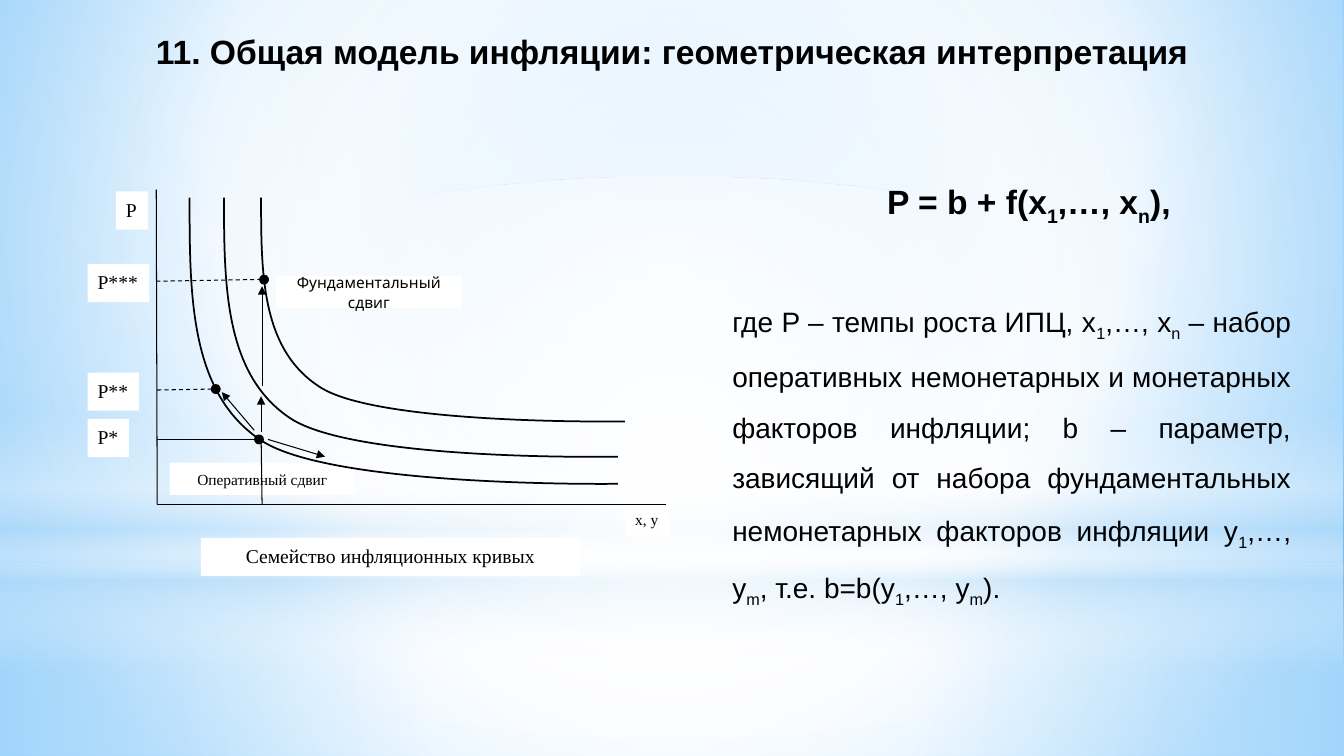
"""Build the slide on the general model of inflation and its family of curves."""
from pptx import Presentation
from pptx.dml.color import RGBColor
from pptx.enum.dml import MSO_LINE
from pptx.enum.shapes import MSO_CONNECTOR, MSO_SHAPE
from pptx.enum.text import MSO_ANCHOR, MSO_AUTO_SIZE, PP_ALIGN
from pptx.oxml import parse_xml
from pptx.oxml.ns import nsdecls, qn
from pptx.util import Pt

RECT, OVAL = MSO_SHAPE.RECTANGLE, MSO_SHAPE.OVAL
LEFT, CENTER, FULL = PP_ALIGN.LEFT, PP_ALIGN.CENTER, PP_ALIGN.JUSTIFY
TOP, MIDDLE = MSO_ANCHOR.TOP, MSO_ANCHOR.MIDDLE
GROW, FIXED = MSO_AUTO_SIZE.SHAPE_TO_FIT_TEXT, MSO_AUTO_SIZE.NONE
DASH, STRAIGHT = MSO_LINE.DASH, MSO_CONNECTOR.STRAIGHT
COLORS = {"ink": "000000", "white": "FFFFFF", "mist": "B4DCFA",
          "sky": "9ED5FF", "deep": "5BB9FF"}
INK = RGBColor.from_string(COLORS["ink"])
WHITE = RGBColor.from_string(COLORS["white"])
SERIF, SANS = "Times New Roman", "Arial"


def blend(stops, rim):
    """Return a gradient fill, circular around rim or linear without it."""
    marks = "".join(
        f'<a:gs pos="{pos * 1000}"><a:srgbClr val="{COLORS[name]}">'
        f'<a:alpha val="{alpha * 1000}"/></a:srgbClr></a:gs>'
        for pos, name, alpha in stops)
    way = '<a:lin ang="5400000" scaled="0"/>'
    if rim:
        sides = " ".join(f'{side}="{part * 1000}"' for side, part in zip("ltrb", rim))
        way = f'<a:path path="circle"><a:fillToRect {sides}/></a:path>'
    return parse_xml(f'<a:gradFill {nsdecls("a")} rotWithShape="1">'
                     f'<a:gsLst>{marks}</a:gsLst>{way}</a:gradFill>')


def write(shape, text, font, frame, para):
    """Fill a shape with text in which underscores enclose subscripts."""
    body = shape.text_frame
    for key, value in frame.items():
        setattr(body, key, value)
    line = body.paragraphs[0]
    for key, value in para.items():
        setattr(line, key, value)
    for spot, part in enumerate(text.split("_")):
        run = line.add_run()
        run.text = part
        for key, value in font.items():
            setattr(run.font, key, value)
        run.font.color.rgb = INK
        if spot % 2:
            run.font._element.set("baseline", "-25000")


deck = Presentation()
deck.slide_width, deck.slide_height = Pt(960), Pt(540)
slide = deck.slides.add_slide(deck.slide_layouts[5])
shapes = slide.shapes

slide.background.fill.solid()
back = slide._element.find(".//" + qn("p:bgPr"))
back.replace(back[0], blend([(0, "sky", 100), (60, "white", 100), (100, "deep", 100)],
                            (20, 10, 20, 60)))
mid = (50, 50, 50, 50)
bands = [
    (RECT, 402, 138, [(0, "white", 91), (37, "white", 76), (100, "mist", 79)], mid),
    (RECT, 0, 402, [(0, "white", 89), (48, "white", 62), (100, "mist", 79)], mid),
    (RECT, 297, 180, [(0, "white", 0), (29, "white", 30), (45, "mist", 40),
                      (55, "white", 26), (65, "mist", 60), (100, "white", 0)], None),
    (OVAL, 126, 402, [(0, "white", 100), (56, "white", 0)], mid),
]
for kind, top, high, stops, rim in bands:
    band = shapes.add_shape(kind, 0, Pt(top), Pt(960), Pt(high))
    band.line.fill.background()
    band.shadow.inherit = False
    band._element.spPr.insert(2, blend(stops, rim))

chart = shapes.add_group_shape().shapes
labels = [
    ("Оперативный сдвиг", 121.2, 330.5, 132.5, 23, 11, SERIF, CENTER, MIDDLE, True),
    ("x, y", 446.6, 360.2, 31.7, 22.3, 11, SERIF, LEFT, TOP, False),
    ("Фундаментальный сдвиг", 197.3, 197, 132.5, 23, 11, "Cabin", CENTER, MIDDLE, True),
    ("P", 82.8, 136.8, 23, 27.2, 14, SERIF, LEFT, TOP, False),
    ("P*", 62.6, 299.3, 29.5, 27.2, 14, SERIF, LEFT, TOP, False),
    ("P**", 62.6, 266.2, 36.7, 27.2, 14, SERIF, LEFT, TOP, False),
    ("P***", 62.6, 188.6, 43.9, 27.2, 14, SERIF, LEFT, TOP, False),
    ("Семейство инфляционных кривых", 143.5, 384.2, 270.7, 27.2, 14, SERIF,
     CENTER, TOP, False),
]
for text, left, top, wide, high, size, face, align, anchor, wrap in labels:
    label = chart.add_shape(RECT, Pt(left), Pt(top), Pt(wide), Pt(high))
    label.shadow.inherit = False
    label.fill.solid()
    label.fill.fore_color.rgb = WHITE
    label.line.fill.background()
    write(label, text, {"size": Pt(size), "name": face},
          {"word_wrap": wrap, "vertical_anchor": anchor},
          {"alignment": align, "line_spacing": 1.06, "space_after": Pt(8)})

curves = [
    [(135.4, 141.1), (135.4, 211), (135.4, 280.8), (186.5, 314.6),
     (237.6, 348.5), (441.4, 345.6), (441.4, 345.6)],
    [(160, 141.1), (160, 204.5), (160.6, 267.8), (207.4, 298.8),
     (254.2, 329.8), (441.4, 326.2), (441.4, 326.2)],
    [(186.5, 141.1), (186.5, 195.8), (186.5, 250.6), (229.7, 277.2),
     (273.6, 303.8), (446.4, 301), (446.4, 301)],
]
for knots in curves:
    (left, top), end = knots[0], knots[-1]
    pen = chart.build_freeform(Pt(left), Pt(top))
    pen.add_line_segments([tuple(map(Pt, end))], close=False)
    curve = pen.convert_to_shape()
    last = curve._element.find(".//" + qn("a:lnTo"))
    for first in (1, 4):
        marks = "".join(f'<a:pt x="{Pt(x) - Pt(left)}" y="{Pt(y) - Pt(top)}"/>'
                        for x, y in knots[first:first + 3])
        last.addprevious(parse_xml(
            f'<a:cubicBezTo {nsdecls("a")}>{marks}</a:cubicBezTo>'))
    curve.shadow.inherit = False
    curve.fill.background()
    curve.line.color.rgb = INK
    curve.line.width = Pt(1.25)

lines = [
    (111.6, 135.4, 112.3, 360.2, "axis"),
    (112.3, 360.2, 475.9, 360.2, "axis"),
    (191.5, 313.9, 232.2, 326.2, "arrow"),
    (181.6, 307.4, 158.4, 280.1, "arrow"),
    (186.5, 308.9, 186.5, 283, "arrow"),
    (187.2, 275.8, 187.2, 204.5, "arrow"),
    (186.5, 311, 187.2, 360.2, "level"),
    (112.3, 313.9, 183.6, 313.9, "level"),
    (112.3, 278.6, 153.4, 277.9, "dash"),
    (111.6, 200.9, 186.5, 199.6, "dash"),
]
for *ends, role in lines:
    line = chart.add_connector(STRAIGHT, *map(Pt, ends))
    line.line.color.rgb = INK
    line.line.width = Pt(0.75)
    if role == "dash":
        line.line.dash_style = DASH
    if role == "arrow":
        line.line._get_or_add_ln().append(
            parse_xml(f'<a:tailEnd {nsdecls("a")} type="triangle"/>'))
    line._element.spPr.append(parse_xml(f'<a:effectLst {nsdecls("a")}/>'))

SPOT = 5.8
for x, y in [(188.6, 199.7), (185, 313.9), (154.1, 277.9)]:
    dot = chart.add_shape(OVAL, Pt(x - SPOT / 2), Pt(y - SPOT / 2), Pt(SPOT), Pt(SPOT))
    dot.shadow.inherit = False
    dot.fill.solid()
    dot.fill.fore_color.rgb = INK
    dot.line.color.rgb = INK
    dot.line.width = Pt(1.25)

rule = shapes.add_textbox(Pt(626.6), Pt(126), Pt(227.5), Pt(36))
write(rule, "P = b + f(x_1_,…, x_n_),", {"size": Pt(24), "name": SANS, "bold": True},
      {"word_wrap": False, "auto_size": GROW}, {})

note = shapes.add_textbox(Pt(516), Pt(200.5), Pt(413.3), Pt(225.4))
write(note, "где P – темпы роста ИПЦ, x_1_,…, x_n_ – набор оперативных немонетарных "
      "и монетарных факторов инфляции; b – параметр, зависящий от набора "
      "фундаментальных немонетарных факторов инфляции y_1_,…, y_m_, "
      "т.е. b=b(y_1_,…, y_m_).", {"size": Pt(20), "name": SANS},
      {"word_wrap": True, "auto_size": GROW}, {"alignment": FULL, "line_spacing": 1.5})

title = shapes.title
title.left, title.top, title.width, title.height = Pt(0), Pt(9.7), Pt(960), Pt(56.9)
write(title, "11. Общая модель инфляции: геометрическая интерпретация",
      {"size": Pt(24), "name": SANS, "bold": True},
      {"word_wrap": True, "auto_size": FIXED, "vertical_anchor": MIDDLE},
      {"alignment": CENTER, "line_spacing": 0.9})
shapes._spTree.append(title._element)

deck.save("out.pptx")
